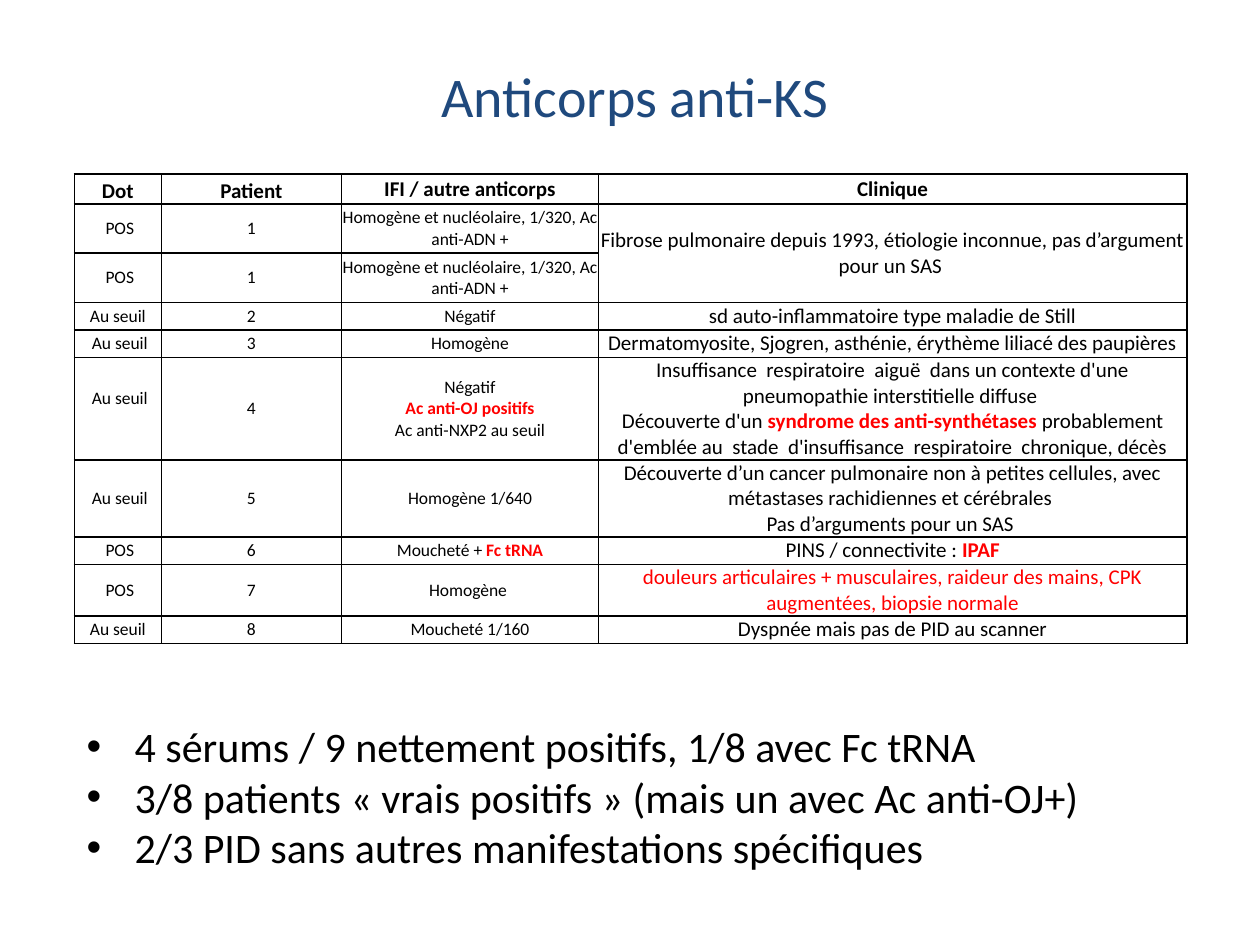
from lxml.etree import SubElement
from pptx import Presentation
from pptx.dml.color import RGBColor
from pptx.enum.text import MSO_ANCHOR, MSO_AUTO_SIZE, PP_ALIGN
from pptx.oxml.ns import qn
from pptx.util import Emu, Inches, Pt

# Content: a cell is a list of paragraphs, a paragraph a list of (text, style) runs
TITLE = "Anticorps anti-KS"
HEADINGS = ["Dot", "Patient", "IFI / autre anticorps", "Clinique"]
NUCLEOLAR = "Homogène et nucléolaire, 1/320, Ac anti-ADN +"
PATIENTS = [
    (" POS", "1", NUCLEOLAR,
     "Fibrose pulmonaire depuis 1993, étiologie inconnue, pas d’argument pour un SAS "),
    (" POS", "1", NUCLEOLAR, None),
    ("Au seuil", "2", "Négatif", "sd auto-inflammatoire type maladie de Still"),
    (" Au seuil", "3", "Homogène",
     "Dermatomyosite, Sjogren, asthénie, érythème liliacé des paupières"),
    (" Au seuil", "4",
     [[("Négatif", "plain")],
      [("Ac anti-OJ positifs", "alert")],
      [("Ac anti-NXP2 au seuil", "plain")]],
     [[("Insuffisance  respiratoire  aiguë  dans un contexte d'une "
        "pneumopathie interstitielle diffuse ", "plain")],
      [("Découverte d'un ", "plain"),
       ("syndrome des anti-synthétases ", "alert"),
       ("probablement d'emblée au  stade  d'insuffisance  respiratoire  "
        "chronique, décès", "plain")]]),
    (" Au seuil", "5", "Homogène 1/640",
     [[("Découverte d’un cancer pulmonaire non à petites cellules, avec "
        "métastases rachidiennes et cérébrales ", "plain")],
      [("Pas d’arguments pour un SAS ", "plain")]]),
    (" POS", "6", [[("Moucheté + ", "plain"), ("Fc tRNA", "alert")]],
     [[("PINS / connectivite : ", "plain"), ("IPAF", "alert")]]),
    (" POS", "7", "Homogène ",
     [[("douleurs articulaires + musculaires, raideur des mains, CPK "
        "augmentées, biopsie normale", "red")]]),
    ("Au seuil", "8", "Moucheté 1/160", "Dyspnée mais pas de PID au scanner"),
]
CONCLUSIONS = [
    "4 sérums / 9 nettement positifs, 1/8 avec Fc tRNA",
    "3/8 patients «\u00a0vrais positifs\u00a0» (mais un avec Ac anti-OJ+)",
    "2/3 PID sans autres manifestations spécifiques",
]

THEME = {
    "font": "Calibri", "border": "000000", "border_width": Pt(1),
    "title": ("1F497D", False), "plain": ("000000", False),
    "heading": ("000000", True), "alert": ("FF0000", True), "red": ("FF0000", False),
    "title_size": 32, "conclusion_size": 24, "clinic_size": 12, "cell_size": 10,
}

# Layout in inches
COLUMN_WIDTHS = [0.69, 1.43, 2.04, 4.67]
ROW_HEIGHTS = [0.24, 0.39, 0.39, 0.22, 0.22, 0.78, 0.59, 0.22, 0.2, 0.22]
CLINIC = HEADINGS.index("Clinique")
LEFT = 0.59
INDENT = Inches(0.38)
RAISED_CELL = (5, 0)


def add_run(paragraph, text, style, size):
    run = paragraph.add_run()
    run.text = text
    color, bold = THEME[style]
    run.font.name, run.font.size, run.font.bold = THEME["font"], Pt(size), bold
    run.font.color.rgb = RGBColor.from_string(color)


def add_paragraphs(frame, paragraphs, size, align):
    for index, runs in enumerate(paragraphs):
        paragraph = frame.add_paragraph() if index else frame.paragraphs[0]
        paragraph.alignment = align
        for text, style in runs:
            add_run(paragraph, text, style, size)


def add_text(slide, box, paragraphs, size, align):
    frame = slide.shapes.add_textbox(*map(Inches, box)).text_frame
    frame.word_wrap = True
    add_paragraphs(frame, paragraphs, size, align)
    return frame


def frame_cell(cell):
    cell.margin_left = cell.margin_right = cell.margin_top = cell.margin_bottom = Emu(0)
    properties = cell._tc.get_or_add_tcPr()
    for side in ("a:lnL", "a:lnR", "a:lnT", "a:lnB"):
        line = SubElement(properties, qn(side), w=str(THEME["border_width"]))
        fill = SubElement(line, qn("a:solidFill"))
        SubElement(fill, qn("a:srgbClr"), val=THEME["border"])
    cell.fill.background()


def add_patient_table(slide):
    table = slide.shapes.add_table(
        len(ROW_HEIGHTS), len(COLUMN_WIDTHS), Inches(LEFT), Inches(1.38),
        Inches(sum(COLUMN_WIDTHS)), Inches(sum(ROW_HEIGHTS))).table
    table.first_row = table.horz_banding = False
    for column, width in zip(table.columns, COLUMN_WIDTHS):
        column.width = Inches(width)
    for row, height in zip(table.rows, ROW_HEIGHTS):
        row.height = Inches(height)

    for r, values in enumerate([HEADINGS] + PATIENTS):
        for c, value in enumerate(values):
            cell = table.cell(r, c)
            frame_cell(cell)
            cell.vertical_anchor = MSO_ANCHOR.MIDDLE
            if value is None:  # same patient as the row above
                table.cell(r - 1, c).merge(cell)
                continue
            if isinstance(value, str):
                value = [[(value, "plain" if r else "heading")]]
            large = r == 0 or c == CLINIC
            size = THEME["clinic_size" if large else "cell_size"]
            add_paragraphs(cell.text_frame, value, size, PP_ALIGN.CENTER)
    for c in (0, 1):
        table.cell(0, c).vertical_anchor = MSO_ANCHOR.BOTTOM
    table.cell(*RAISED_CELL).margin_bottom = Inches(0.17)


def main():
    presentation = Presentation()
    presentation.slide_width, presentation.slide_height = Inches(10), Inches(7.5)
    slide = presentation.slides.add_slide(presentation.slide_layouts[6])

    add_patient_table(slide)

    # Title
    title = add_text(slide, (0.54, 0.13, 9, 1.25), [[(TITLE, "title")]],
                     THEME["title_size"], PP_ALIGN.CENTER)
    title.vertical_anchor = MSO_ANCHOR.MIDDLE

    # Bulleted conclusions
    conclusions = add_text(slide, (LEFT, 5.67, 8.5, 1.31),
                           [[(text, "plain")] for text in CONCLUSIONS],
                           THEME["conclusion_size"], PP_ALIGN.LEFT)
    conclusions.auto_size = MSO_AUTO_SIZE.SHAPE_TO_FIT_TEXT
    for paragraph in conclusions.paragraphs:
        properties = paragraph._p.get_or_add_pPr()
        properties.set("marL", str(INDENT))
        properties.set("indent", str(-INDENT))
        SubElement(properties, qn("a:buFont"), typeface="Arial")
        SubElement(properties, qn("a:buChar"), char="•")

    presentation.save("out.pptx")


if __name__ == "__main__":
    main()
